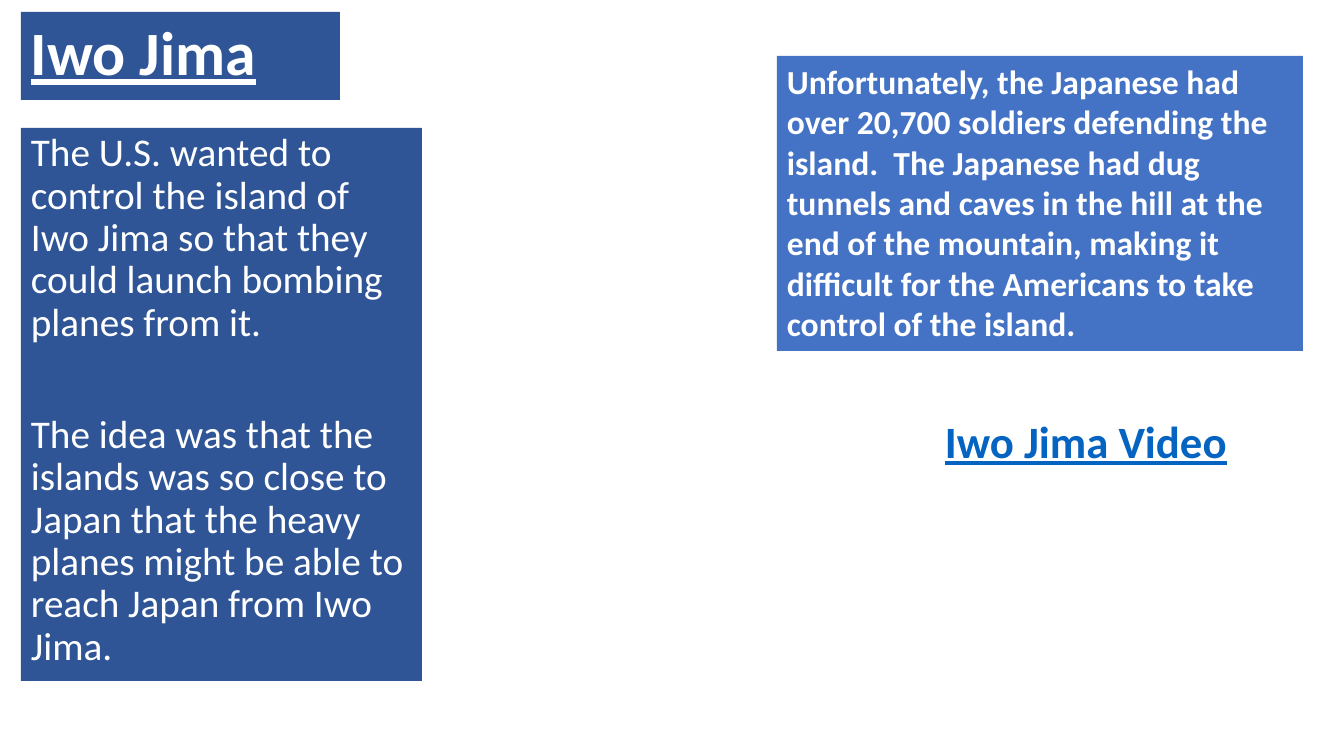
from pptx import Presentation
from pptx.dml.color import RGBColor as Rgb
from pptx.enum.shapes import MSO_SHAPE as Kind
from pptx.enum.text import MSO_ANCHOR as Anchor, MSO_AUTO_SIZE as Fit, PP_ALIGN as Align
from pptx.util import Emu, Pt

PX = 914400 / 100.8
THEME = {
    "font": "Calibri",
    "navy": "2F5597", "blue": "4472C4", "white": "FFFFFF", "link": "0563C1",
    "title": 44, "video": 32, "body": 28, "note": 24,
}


def px(n):
    return Emu(round(n * PX))


def add_text(box, *paras, size, color="white", fill=None, bold=False, line=False,
             wrap=True, grow=False, anchor=Anchor.TOP, pitch=1.0, gap=0):
    """Put a text on the slide, on a filled rectangle if a fill is named."""
    place = [px(n) for n in box]
    if fill:
        shape = deck.add_shape(Kind.RECTANGLE, *place)
        shape.shadow.inherit = False
        shape.fill.solid()
        shape.fill.fore_color.rgb = Rgb.from_string(THEME[fill])
        shape.line.fill.background()
    else:
        shape = deck.add_textbox(*place)
    frame = shape.text_frame
    frame.word_wrap = wrap
    frame.auto_size = Fit.SHAPE_TO_FIT_TEXT if grow else Fit.NONE
    frame.vertical_anchor = anchor
    for i, words in enumerate(paras):
        para = frame.add_paragraph() if i else frame.paragraphs[0]
        para.alignment = Align.LEFT
        para.line_spacing = pitch
        para.space_before = Pt(gap if i else 0)
        run = para.add_run()
        run.text = words
        font = run.font
        font.name = THEME["font"]
        font.size = Pt(THEME[size])
        font.bold = bold
        font.underline = line
        font.color.rgb = Rgb.from_string(THEME[color])


show = Presentation()
show.slide_width, show.slide_height = px(1344), px(756)
deck = show.slides.add_slide(show.slide_layouts[6]).shapes

add_text((21, 12, 319, 88), "Iwo Jima", size="title", fill="navy",
         bold=True, line=True, anchor=Anchor.MIDDLE, pitch=0.9)

add_text((21, 128, 401, 553),
         "The U.S. wanted to control the island of Iwo Jima so that they could "
         "launch bombing planes from it.",
         "The idea was that the islands was so close to Japan that the heavy "
         "planes might be able to reach Japan from Iwo Jima.",
         size="body", fill="navy", pitch=0.9, gap=50)

add_text((777, 56, 526, 295),
         "Unfortunately, the Japanese had over 20,700 soldiers defending the "
         "island.  The Japanese had dug tunnels and caves in the hill at the end "
         "of the mountain, making it difficult for the Americans to take control "
         "of the island.",
         size="note", fill="blue", bold=True, grow=True)

add_text((935, 409, 305, 65), "Iwo Jima Video", size="video", color="link",
         bold=True, line=True, wrap=False, grow=True)

show.save("out.pptx")
